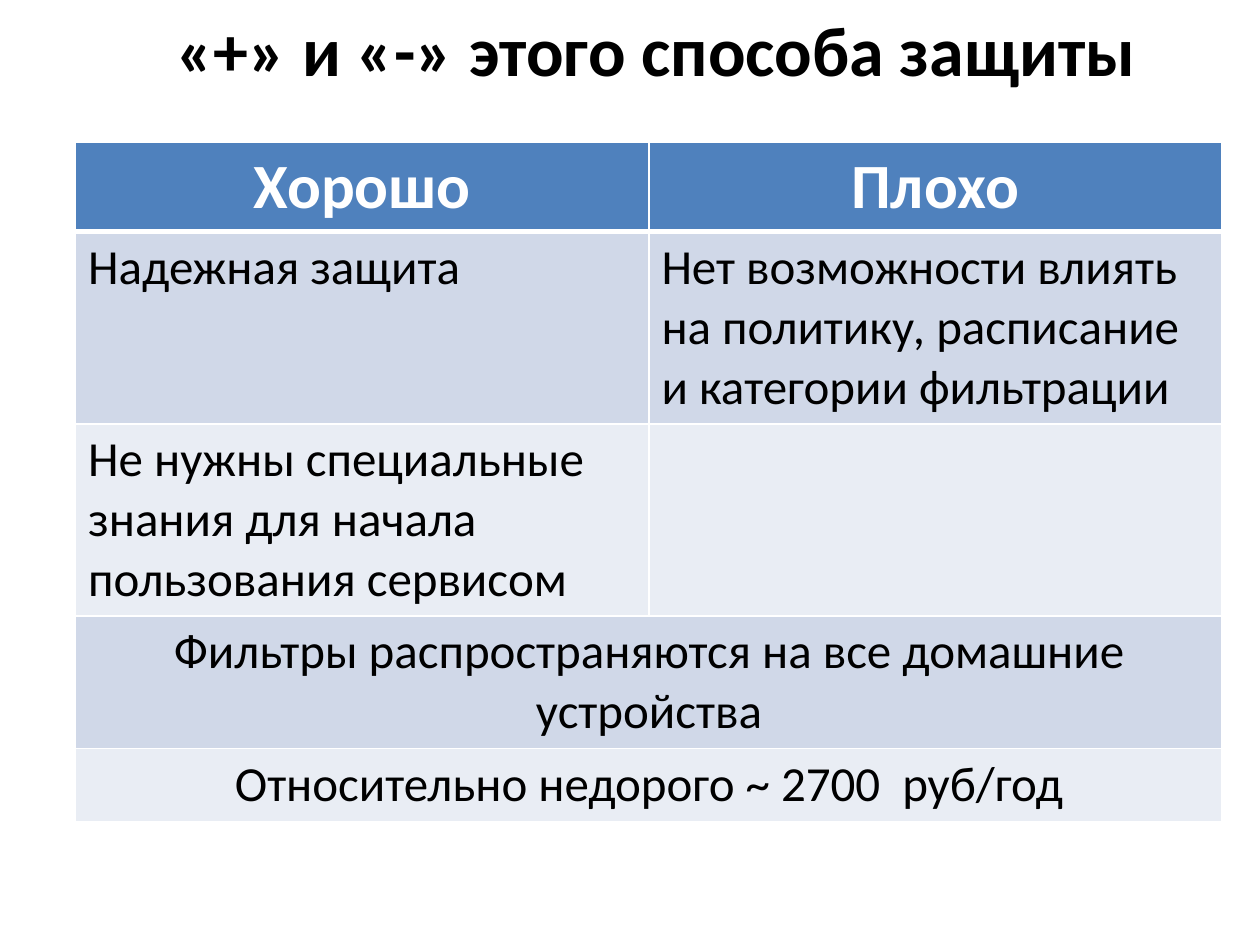
from dataclasses import dataclass

from lxml import etree
from pptx import Presentation
from pptx.dml.color import RGBColor
from pptx.enum.text import MSO_AUTO_SIZE, PP_ALIGN
from pptx.oxml.ns import qn
from pptx.slide import Slide
from pptx.util import Inches, Pt

BLACK = RGBColor(0x00, 0x00, 0x00)
WHITE = RGBColor(0xFF, 0xFF, 0xFF)
BLUE = RGBColor(0x4F, 0x81, 0xBD)
BANDS = (RGBColor(0xE9, 0xED, 0xF4), RGBColor(0xD0, 0xD8, 0xE8))
LEFT, CENTER = PP_ALIGN.LEFT, PP_ALIGN.CENTER
FIT_SHAPE = MSO_AUTO_SIZE.SHAPE_TO_FIT_TEXT
WIDTH, HEIGHT = 10, 7.5

HEADER = ("Хорошо", "Плохо")
ROWS = (
    ("Надежная защита",
     "Нет возможности влиять на политику, расписание  и категории фильтрации"),
    ("Не нужны специальные знания для начала пользования сервисом", ""),
    ("Фильтры распространяются на все домашние устройства",),
    ("Относительно недорого ~ 2700  руб/год",),
)
ROW_HEIGHTS = (0.7, 1.5, 1.5, 1.02, 0.58)


@dataclass
class Deck:
    """Draws styled elements on a slide, placed by shares of its size."""

    slide: Slide
    font: str = "Calibri"
    title_size: int = 40
    header_size: int = 36
    body_size: int = 28

    def box(self, x, y, w, h):
        return (Inches(x * WIDTH), Inches(y * HEIGHT),
                Inches(w * WIDTH), Inches(h * HEIGHT))

    def text(self, tf, text, size, color, bold=False, align=LEFT):
        p = tf.paragraphs[0]
        p.text = text
        p.alignment = align
        p.font.name = self.font
        p.font.size = Pt(size)
        p.font.bold = bold
        p.font.color.rgb = color

    def title(self, text, x, y, w, h):
        tf = self.slide.shapes.add_textbox(*self.box(x, y, w, h)).text_frame
        tf.word_wrap = False
        tf.auto_size = FIT_SHAPE
        self.text(tf, text, self.title_size, BLACK, bold=True)

    def borders(self, cell, bottom):
        tc_pr = cell._tc.get_or_add_tcPr()
        widths = {"a:lnL": 1, "a:lnR": 1, "a:lnT": 1, "a:lnB": bottom}
        for i, (tag, width) in enumerate(widths.items()):
            ln = etree.Element(qn(tag), w=str(Pt(width)))
            fill = etree.SubElement(ln, qn("a:solidFill"))
            etree.SubElement(fill, qn("a:srgbClr"), val=str(WHITE))
            tc_pr.insert(i, ln)

    def cell(self, cell, text, fill, size, color, bold, align, bottom=1):
        cell.fill.solid()
        cell.fill.fore_color.rgb = fill
        self.text(cell.text_frame, text, size, color, bold, align)
        self.borders(cell, bottom)

    def table(self, header, rows, heights, x, y, w):
        cols = len(header)
        h = sum(heights) / HEIGHT
        table = self.slide.shapes.add_table(
            len(heights), cols, *self.box(x, y, w, h)).table
        for row, height in zip(table.rows, heights):
            row.height = Inches(height)
        for j, text in enumerate(header):
            self.cell(table.cell(0, j), text, BLUE, self.header_size,
                      WHITE, True, CENTER, bottom=3)
        for i, texts in enumerate(rows, 1):
            merged = len(texts) < cols
            if merged:
                table.cell(i, 0).merge(table.cell(i, cols - 1))
            for j, text in enumerate(texts):
                self.cell(table.cell(i, j), text, BANDS[i % 2], self.body_size,
                          BLACK, False, CENTER if merged else LEFT)


def main():
    prs = Presentation()
    prs.slide_width, prs.slide_height = Inches(WIDTH), Inches(HEIGHT)
    deck = Deck(prs.slides.add_slide(prs.slide_layouts[6]))
    deck.table(HEADER, ROWS, ROW_HEIGHTS, x=0.06, y=0.15, w=0.91)
    deck.title("«+» и «-» этого способа защиты", x=0.13, y=0, w=0.79, h=0.1)
    prs.save("out.pptx")


if __name__ == "__main__":
    main()
